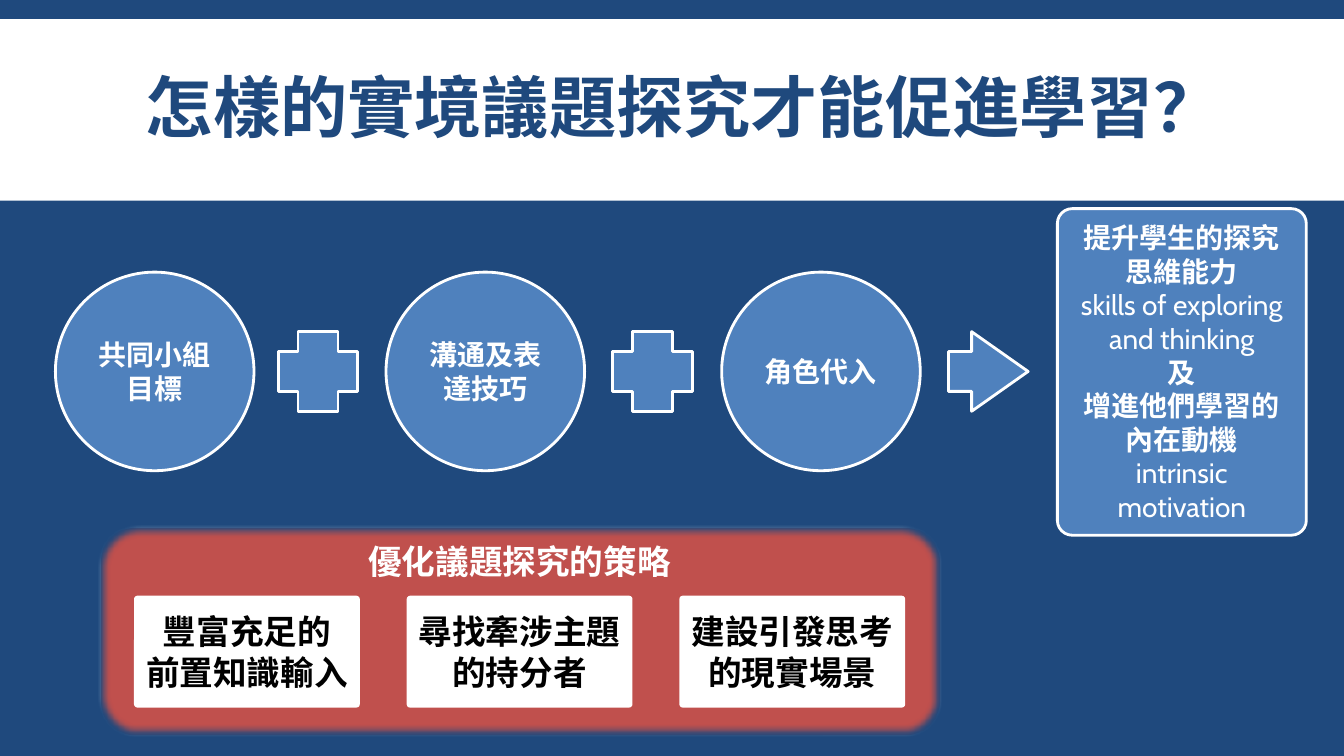
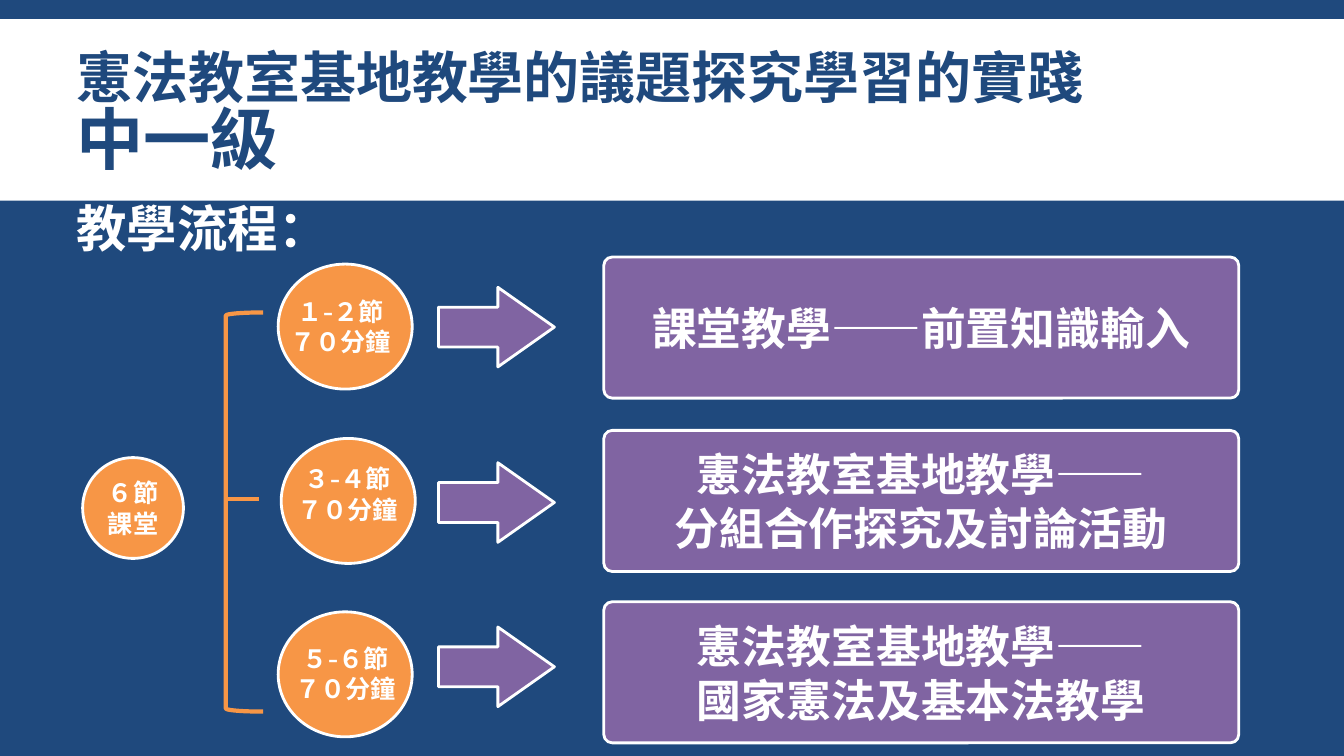
from dataclasses import dataclass

from lxml import etree
from pptx import Presentation
from pptx.dml.color import RGBColor
from pptx.enum import shapes, text
from pptx.oxml import ns
from pptx.util import Pt

PX = 9144  # EMU in one px, 100 px to the inch
KIND = shapes.MSO_SHAPE
MIDDLE, TOP = text.MSO_ANCHOR.MIDDLE, text.MSO_ANCHOR.TOP
CENTER, LEFT = text.PP_ALIGN.CENTER, text.PP_ALIGN.LEFT


@dataclass(frozen=True)
class Theme:
    font: str = "Cabin"
    navy: str = "1F497D"
    white: str = "FFFFFF"
    black: str = "000000"
    blue: str = "4F81BD"
    red: str = "C0504D"
    orange: str = "F79646"
    purple: str = "8064A2"
    title: int = 48
    long_title: int = 40
    heading: int = 36
    step: int = 32
    strategy: int = 24
    factor: int = 20
    lesson: int = 18
    outline: int = 2
    bracket: int = 3


THEME = Theme()


def rgb(color):
    return RGBColor.from_string(color)


def emu(*lengths):
    return [round(length * PX) for length in lengths]


def style(paragraph, size, color=THEME.white, bold=True, align=CENTER):
    font = paragraph.font
    font.name, font.size, font.bold = THEME.font, Pt(size), bold
    font.color.rgb = rgb(color)
    paragraph.alignment = align


def write(frame, lines, size, color=THEME.white, align=CENTER, anchor=MIDDLE,
          inset=5):
    """Fill a frame with one paragraph a line; lines in Latin letters are not bold."""
    frame.word_wrap = True
    frame.vertical_anchor = anchor
    frame.margin_left = frame.margin_right = inset * PX
    for index, line in enumerate(lines):
        paragraph = frame.add_paragraph() if index else frame.paragraphs[0]
        paragraph.text = line
        style(paragraph, size, color, not line.isascii(), align)


def add_block(slide, kind, box, fill=None, line=THEME.white,
              width=THEME.outline, adjust=()):
    block = slide.shapes.add_shape(kind, *emu(*box))
    block.shadow.inherit = False
    if fill:
        block.fill.solid()
        block.fill.fore_color.rgb = rgb(fill)
    else:
        block.fill.background()
    if line:
        block.line.color.rgb = rgb(line)
        block.line.width = Pt(width)
    else:
        block.line.fill.background()
    for index, value in enumerate(adjust):
        block.adjustments[index] = value
    return block


def add_label(slide, box, lines, size, **options):
    label = slide.shapes.add_textbox(*emu(*box))
    write(label.text_frame, lines, size, **options)
    return label.text_frame


def add_arrow(slide, box, fill):
    add_block(slide, KIND.RIGHT_ARROW, box, fill, adjust=(0.5, 0.71))


def add_line(slide, start, end, color, width):
    line = slide.shapes.add_connector(shapes.MSO_CONNECTOR.STRAIGHT,
                                      *emu(*start, *end))
    line.line.color.rgb = rgb(color)
    line.line.width = Pt(width)
    properties = line._element.spPr
    etree.SubElement(properties, ns.qn("a:effectLst"))


def soften_edge(block, radius):
    effects = block._element.spPr.find(ns.qn("a:effectLst"))
    etree.SubElement(effects, ns.qn("a:softEdge"), rad=str(radius * PX))


def new_slide(deck, title_box, title_lines):
    """Start a navy slide with the white band and a title of (text, size) lines."""
    slide = deck.slides.add_slide(deck.slide_layouts[6])
    slide.background.fill.solid()
    slide.background.fill.fore_color.rgb = rgb(THEME.navy)
    add_block(slide, KIND.RECTANGLE, (0, 19, deck.slide_width / PX, 180),
              THEME.white, line=None)
    frame = add_label(slide, title_box, [""], THEME.title, inset=10)
    title = frame.paragraphs[0]
    style(title, THEME.title, THEME.navy, align=LEFT)
    title.line_spacing = 0.85
    for index, (words, size) in enumerate(title_lines):
        if index:
            title.add_line_break()
        run = title.add_run()
        run.text = words
        run.font.size = Pt(size)
    return slide


def add_factors(slide):
    for left, factor in ((55, "共同小組目標"), (383, "溝通及表達技巧"),
                         (716, "角色代入")):
        circle = add_block(slide, KIND.OVAL, (left, 270, 197, 197), THEME.blue)
        write(circle.text_frame, [factor], THEME.factor)
    for left in (276, 608):
        add_block(slide, KIND.CROSS, (left, 329, 79, 79), THEME.blue)
    add_arrow(slide, (941, 329, 79, 79), THEME.blue)
    outcome = add_block(slide, KIND.ROUNDED_RECTANGLE, (1049, 207, 247, 324),
                        THEME.blue, adjust=[0.06])
    write(outcome.text_frame,
          ["提升學生的探究思維能力", "skills of exploring and thinking", "及",
           "增進他們學習的內在動機", "intrinsic motivation"],
          THEME.factor, inset=16)


def add_strategies(slide):
    panel = add_block(slide, KIND.ROUNDED_RECTANGLE, (98, 522, 835, 207), THEME.red)
    soften_edge(panel, 7)
    write(panel.text_frame, ["優化議題探究的策略"], THEME.strategy, anchor=TOP)
    strategies = ("豐富充足的\v前置知識輸入", "尋找牽涉主題的持分者",
                  "建設引發思考的現實場景")
    for index, strategy in enumerate(strategies):
        card = add_block(slide, KIND.ROUNDED_RECTANGLE,
                         (133 + 270.5 * index, 591, 224, 111),
                         THEME.white, line=None, adjust=[0.03])
        write(card.text_frame, [strategy], THEME.strategy, THEME.black)


def add_lesson_total(slide):
    total = add_block(slide, KIND.OVAL, (82, 454, 100, 100), THEME.orange)
    write(total.text_frame, ["６節課堂"], THEME.lesson)
    add_block(slide, KIND.LEFT_BRACKET, (224, 310, 37, 396),
              line=THEME.orange, width=THEME.bracket)
    add_line(slide, (224, 495), (257, 495), THEME.orange, THEME.bracket)


def add_stage(slide, circle_at, label_at, arrow_top, step_top, periods, step):
    add_block(slide, KIND.OVAL, (*circle_at, 133, 124), THEME.orange)
    add_label(slide, (*label_at, 156, 101), [periods, "７０分鐘"],
              THEME.lesson, anchor=TOP)
    add_arrow(slide, (435, arrow_top, 115, 79), THEME.purple)
    card = add_block(slide, KIND.ROUNDED_RECTANGLE, (599, step_top, 630, 140),
                     THEME.purple, adjust=[0.06])
    write(card.text_frame, step, THEME.step)


def build_learning_slide(deck):
    slide = new_slide(deck, (135, 29, 1090, 165),
                      [("怎樣的實境議題探究才能促進學習？", THEME.title)])
    add_factors(slide)
    add_strategies(slide)


def build_lesson_slide(deck):
    slide = new_slide(deck, (66, 32, 1177, 165),
                      [("憲法教室基地教學的議題探究學習的實踐", THEME.long_title),
                       ("中一級", THEME.title)])
    heading = add_label(slide, (66, 197, 1188, 60), ["教學流程："], THEME.heading,
                        align=LEFT, anchor=TOP, inset=10)
    heading.paragraphs[0].line_spacing = 0.9
    add_lesson_total(slide)
    base_teaching = "憲法教室基地教學——"
    stages = (
        ((276, 262), (260, 289), 285, 255, "１-２節",
         ["課堂教學——前置知識輸入"]),
        ((279, 435), (267, 455), 459, 427, "３-４節",
         [base_teaching, "分組合作探究及討論活動"]),
        ((276, 607), (265, 633), 622, 597, "５-６節",
         [base_teaching, "國家憲法及基本法教學"]),
    )
    for stage in stages:
        add_stage(slide, *stage)


def main():
    deck = Presentation()
    deck.slide_width, deck.slide_height = emu(1333.33, 750)
    build_learning_slide(deck)
    build_lesson_slide(deck)
    deck.save("out.pptx")


if __name__ == "__main__":
    main()
